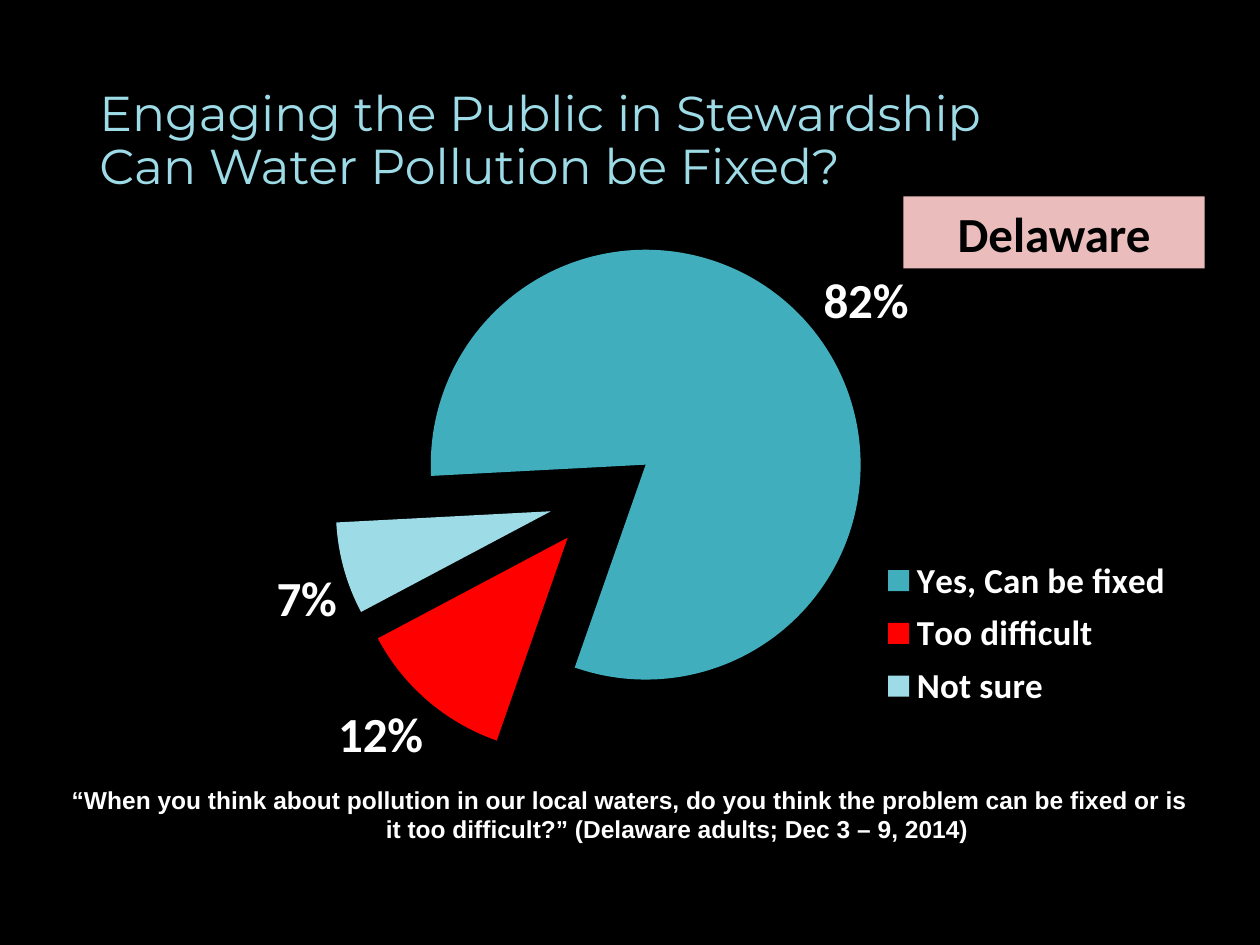
from lxml import etree
from pptx import Presentation
from pptx import util as u
from pptx.chart import data as chart_data
from pptx.dml import color
from pptx.enum import chart as chart_enum, shapes, text
from pptx.oxml import ns, parse_xml

Inches, Pt = u.Inches, u.Pt
COLORS = {
    "background": "000000",
    "title": "9DDBE7",
    "text": "FFFFFF",
    "tag": "FFCCCC",
    "tag_text": "000000",
}
ANSWERS = [
    ("Yes, Can be fixed", 0.82, "41AEBD"),
    ("Too difficult", 0.12, "FF0000"),
    ("Not sure", 0.07, "9DDBE7"),
]


def rgb(value):
    return color.RGBColor.from_string(value)


def style_font(font, name, size, value, bold=False):
    font.name = name
    font.size = Pt(size)
    font.bold = bold
    font.color.rgb = rgb(value)


def write(shape, words, name, size, value, bold=False, align=None):
    frame = shape.text_frame
    frame.word_wrap = True
    frame.text = words
    paragraph = frame.paragraphs[0]
    paragraph.alignment = align
    for run in paragraph.runs:
        style_font(run.font, name, size, value, bold)
    return paragraph


def add_title(slide, box):
    shape = slide.shapes.add_textbox(*box)
    paragraph = write(
        shape,
        "Engaging the Public in Stewardship \vCan Water Pollution be Fixed?",
        "Montserrat", 28, COLORS["title"],
    )
    paragraph.line_spacing = 0.9
    shape.text_frame.vertical_anchor = text.MSO_ANCHOR.MIDDLE


def layout_xml(x, y, width, height, inner=False):
    target = '<c:layoutTarget val="inner"/>' if inner else ""
    return parse_xml(
        f'<c:layout {ns.nsdecls("c")}><c:manualLayout>{target}'
        '<c:xMode val="edge"/><c:yMode val="edge"/>'
        f'<c:x val="{x}"/><c:y val="{y}"/><c:w val="{width}"/><c:h val="{height}"/>'
        "</c:manualLayout></c:layout>"
    )


def set_layout(parent, layout, index):
    for old in parent.findall(ns.qn("c:layout")):
        parent.remove(old)
    parent.insert(index, layout)


def add_pie(slide, box):
    data = chart_data.CategoryChartData(number_format="0%")
    data.categories = [name for name, _, _ in ANSWERS]
    data.add_series("Series 1", [value for _, value, _ in ANSWERS])
    chart = slide.shapes.add_chart(chart_enum.XL_CHART_TYPE.PIE, *box, data).chart
    chart.has_title = False
    style_font(chart.font, "Calibri", 18, COLORS["text"])

    plot = chart.plots[0]
    plot.vary_by_categories = True
    series = plot.series[0]
    for index, (_, _, value) in enumerate(ANSWERS):
        fill = series.points[index].format.fill
        fill.solid()
        fill.fore_color.rgb = rgb(value)
    labels = series.data_labels
    labels.show_value = True
    labels.show_percentage = False
    labels.number_format = "0%"
    labels.number_format_is_linked = False
    labels.position = chart_enum.XL_LABEL_POSITION.OUTSIDE_END
    style_font(labels.font, "Calibri", 28, COLORS["text"], True)

    explosion = etree.Element(ns.qn("c:explosion"), val="25")
    series._element.find(ns.qn("c:dPt")).addprevious(explosion)
    pie = chart._chartSpace.find(".//" + ns.qn("c:pieChart"))
    for old in pie.findall(ns.qn("c:firstSliceAng")):
        pie.remove(old)
    etree.SubElement(pie, ns.qn("c:firstSliceAng"), val="267")
    set_layout(pie.getparent(), layout_xml(0.239, 0.013, 0.474, 0.898, True), 0)

    chart.has_legend = True
    legend = chart.legend
    legend.position = chart_enum.XL_LEGEND_POSITION.RIGHT
    legend.include_in_layout = False
    style_font(legend.font, "Calibri", 20, COLORS["text"], True)
    set_layout(legend._element, layout_xml(0.71, 0.55, 0.28, 0.28), 1)


def add_question(slide, box):
    shape = slide.shapes.add_textbox(*box)
    paragraph = write(
        shape,
        "“When you think about pollution in our local waters, do you think the problem "
        "can be fixed or is it too difficult?” (Delaware adults; Dec 3 – 9, 2014)",
        "Arial", 14, COLORS["text"], True, text.PP_ALIGN.CENTER,
    )
    properties = paragraph._p.get_or_add_pPr()
    properties.set("marL", str(Inches(0.75)))
    properties.set("indent", str(Inches(-0.75)))


def add_tag(slide, box):
    shape = slide.shapes.add_shape(shapes.MSO_SHAPE.RECTANGLE, *box)
    shape.shadow.inherit = False
    shape.fill.solid()
    shape.fill.fore_color.rgb = rgb(COLORS["tag"])
    shape.line.fill.background()
    tint = shape._element.spPr.find(".//" + ns.qn("a:srgbClr"))
    etree.SubElement(tint, ns.qn("a:alpha"), val="92000")
    write(shape, "Delaware", "Calibri", 28, COLORS["tag_text"], True, text.PP_ALIGN.CENTER)


def inches(*lengths):
    return [Inches(length) for length in lengths]


def main():
    presentation = Presentation()
    presentation.slide_width, presentation.slide_height = inches(10, 7.5)
    slide = presentation.slides.add_slide(presentation.slide_layouts[6])
    slide.background.fill.solid()
    slide.background.fill.fore_color.rgb = rgb(COLORS["background"])
    add_title(slide, inches(0.69, 0.4, 8.62, 1.45))
    add_pie(slide, inches(0.5, 1.75, 9, 4.75))
    add_question(slide, inches(0.44, 6.18, 9.12, 0.57))
    add_tag(slide, inches(7.17, 1.56, 2.39, 0.57))
    presentation.save("out.pptx")


if __name__ == "__main__":
    main()
